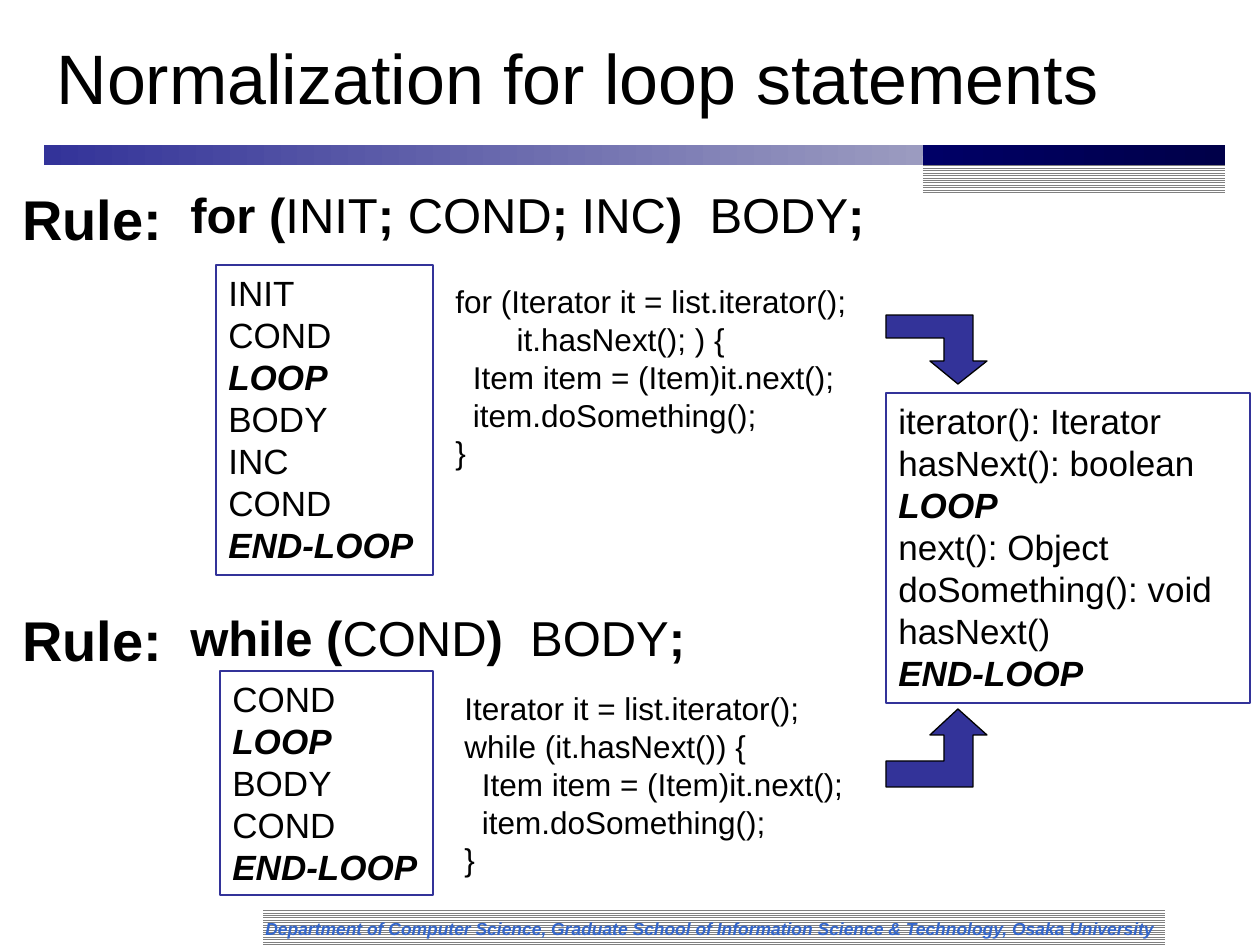
from pptx import Presentation
from pptx.dml.color import RGBColor
from pptx.enum.dml import MSO_PATTERN
from pptx.enum.shapes import MSO_SHAPE
from pptx.enum.text import MSO_ANCHOR, MSO_AUTO_SIZE, PP_ALIGN
from pptx.util import Emu, Pt

SCALE = 914400 / 126
FONT = "Arial"
BLACK = "000000"
INDIGO = "333399"
LOOP_MARKS = ("LOOP", "END-LOOP")


def px(length):
    return Emu(round(length * SCALE))


def color(value):
    return RGBColor.from_string(value)


class SlideBuilder:
    def __init__(self, deck):
        self.slide = deck.slides.add_slide(deck.slide_layouts[5])
        self.shapes = self.slide.shapes

    def fill_text(self, frame, lines, size, tint=BLACK, anchor=MSO_ANCHOR.TOP):
        frame.word_wrap = True
        frame.auto_size = MSO_AUTO_SIZE.NONE
        frame.vertical_anchor = anchor
        frame.margin_right = 0
        for index, line in enumerate(lines):
            para = frame.add_paragraph() if index else frame.paragraphs[0]
            para.alignment = PP_ALIGN.LEFT
            for text, bold, italic in line:
                span = para.add_run()
                span.text = text
                span.font.name = FONT
                span.font.size = Pt(size)
                span.font.bold = bold
                span.font.italic = italic
                span.font.color.rgb = color(tint)

    def title(self, text, left, top, width, height):
        box = self.shapes.title
        box.left, box.top, box.width, box.height = map(px, (left, top, width, height))
        self.fill_text(box.text_frame, [[(text, False, False)]], 40, anchor=MSO_ANCHOR.MIDDLE)

    def text(self, lines, left, top, width, height, size, **style):
        box = self.shapes.add_textbox(*map(px, (left, top, width, height)))
        self.fill_text(box.text_frame, lines, size, **style)

    def rectangle(self, left, top, width, height):
        box = self.shapes.add_shape(MSO_SHAPE.RECTANGLE, *map(px, (left, top, width, height)))
        box.shadow.inherit = False
        box.line.fill.background()
        return box

    def stripes(self, *place):
        fill = self.rectangle(*place).fill
        fill.patterned()
        fill.pattern = MSO_PATTERN.LIGHT_HORIZONTAL
        fill.fore_color.rgb = color("808080")
        fill.back_color.rgb = color("FFFFFF")

    def gradient(self, start, end, *place):
        fill = self.rectangle(*place).fill
        fill.gradient()
        fill.gradient_angle = 0
        for stop, tint in zip(fill.gradient_stops, (start, end)):
            stop.color.rgb = color(tint)

    def sequence(self, steps, *place):
        box = self.rectangle(*place)
        box.fill.background()
        box.line.color.rgb = color(INDIGO)
        box.line.width = Pt(0.75)
        lines = [[(step, step in LOOP_MARKS, step in LOOP_MARKS)] for step in steps]
        self.fill_text(box.text_frame, lines, 20)

    def rule(self, parts, top, label_top, width):
        self.text([[("Rule:", True, False)]], 10, label_top, 166, 81, 32)
        line = [(part, index % 2 == 0, False) for index, part in enumerate(parts)]
        self.text([line], 178, top, width, 72, 28)

    def code(self, lines, left, top, width):
        self.text([[(line, False, False)] for line in lines], left, top, width, 204, 18)

    def bent_arrow(self, tip, neck, inner, outer):
        outline = self.shapes.build_freeform(958, tip, scale=SCALE)
        outline.add_line_segments([
            (930, neck), (944, neck), (944, inner), (886, inner),
            (886, outer), (973, outer), (973, neck), (987, neck),
        ], close=True)
        arrow = outline.convert_to_shape()
        arrow.shadow.inherit = False
        arrow.fill.solid()
        arrow.fill.fore_color.rgb = color(INDIGO)
        arrow.line.color.rgb = color(BLACK)
        arrow.line.width = Pt(0.75)


def main():
    deck = Presentation()
    deck.slide_width, deck.slide_height = px(1260), px(945)
    page = SlideBuilder(deck)

    page.stripes(263, 908, 902, 37)
    page.gradient(INDIGO, "9B9BC0", 44, 145, 879, 20)
    page.stripes(923, 156, 302, 38)
    page.gradient("000066", "000049", 923, 145, 302, 20)
    department = (
        "Department of Computer Science, Graduate School of "
        "Information Science & Technology, Osaka University"
    )
    page.text([[(department, True, True)]], 253, 911, 922, 34, 10,
              tint="3366CC", anchor=MSO_ANCHOR.MIDDLE)
    page.title("Normalization for loop statements", 44, 16, 1182, 120)

    page.rule(["for (", "INIT", "; ", "COND", "; ", "INC", ")  ", "BODY", ";"], 178, 178, 721)
    page.sequence(["INIT", "COND", "LOOP", "BODY", "INC", "COND", "END-LOOP"],
                  216, 265, 217, 310)
    loop_body = ["  Item item = (Item)it.next();", "  item.doSomething();", "}"]
    page.code(["for (Iterator it = list.iterator();", "       it.hasNext(); ) {", *loop_body],
              443, 276, 421)

    page.rule(["while (", "COND", ")  ", "BODY", ";"], 601, 599, 525)
    page.sequence(["COND", "LOOP", "BODY", "COND", "END-LOOP"], 220, 671, 213, 224)
    page.code(["Iterator it = list.iterator();", "while (it.hasNext()) {", *loop_body],
              452, 683, 415)

    page.sequence(["iterator(): Iterator", "hasNext(): boolean", "LOOP", "next(): Object",
                   "doSomething(): void", "hasNext()", "END-LOOP"], 886, 393, 364, 310)
    page.bent_arrow(384, 361, 338, 315)
    page.bent_arrow(709, 735, 761, 787)

    deck.save("out.pptx")


if __name__ == "__main__":
    main()
